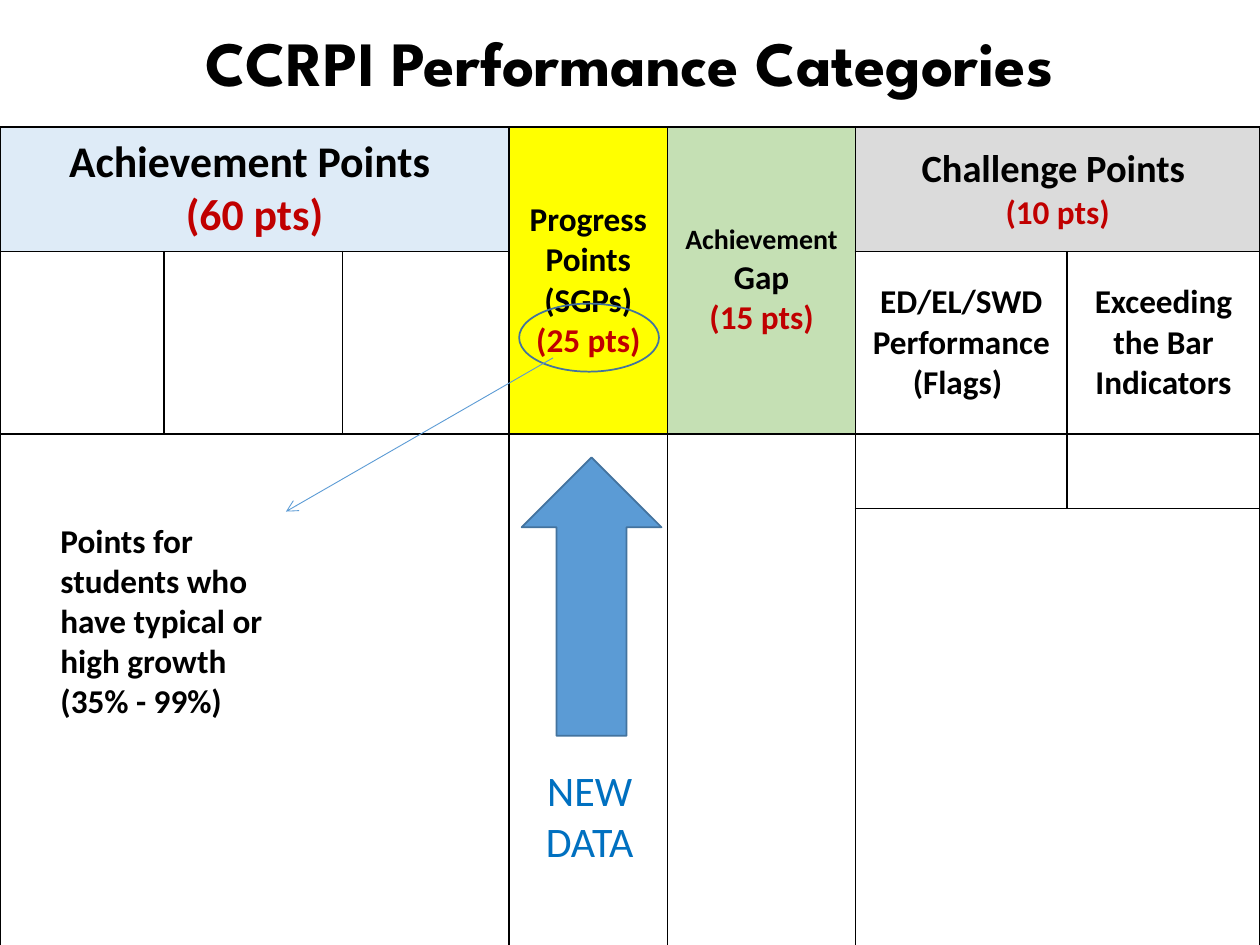
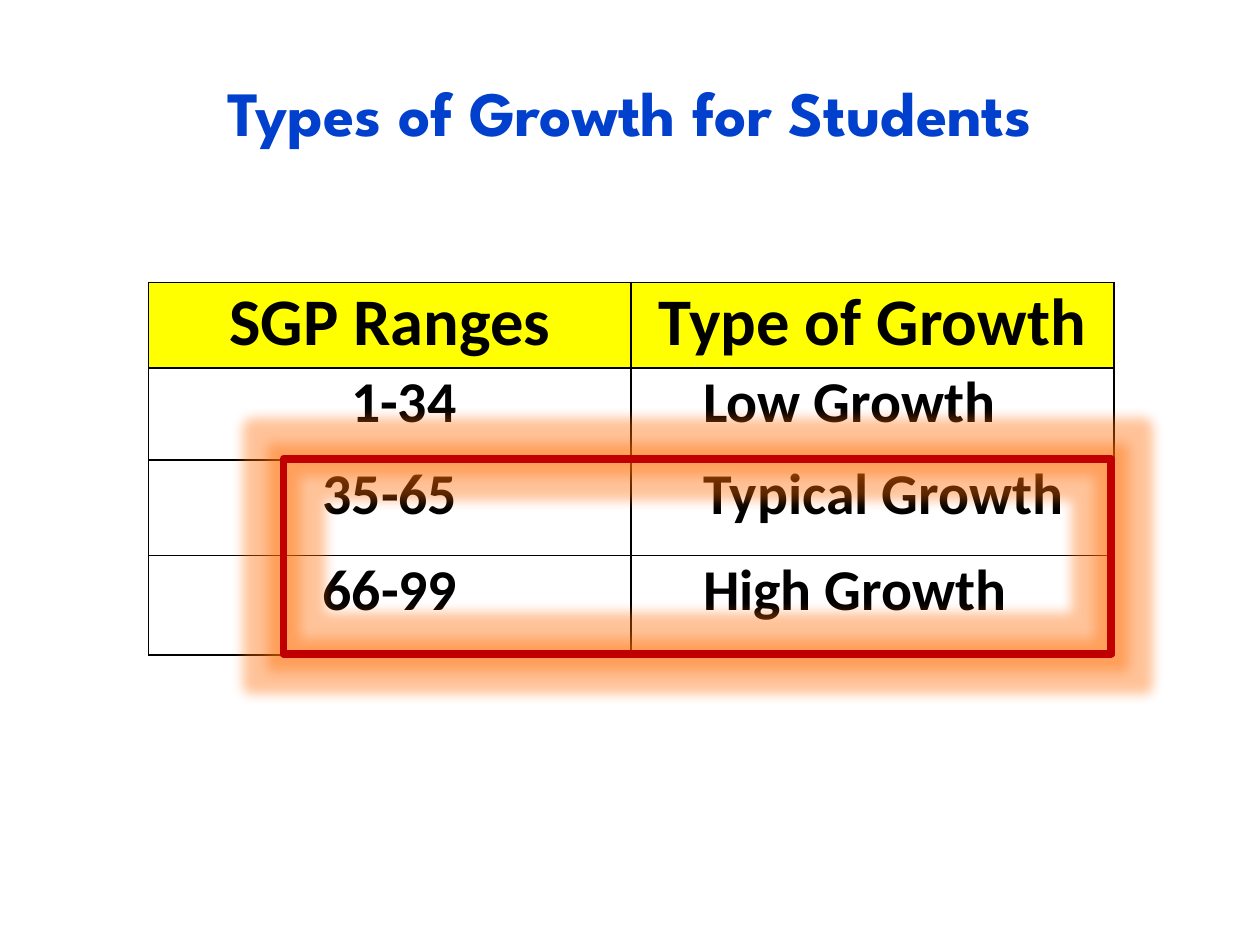
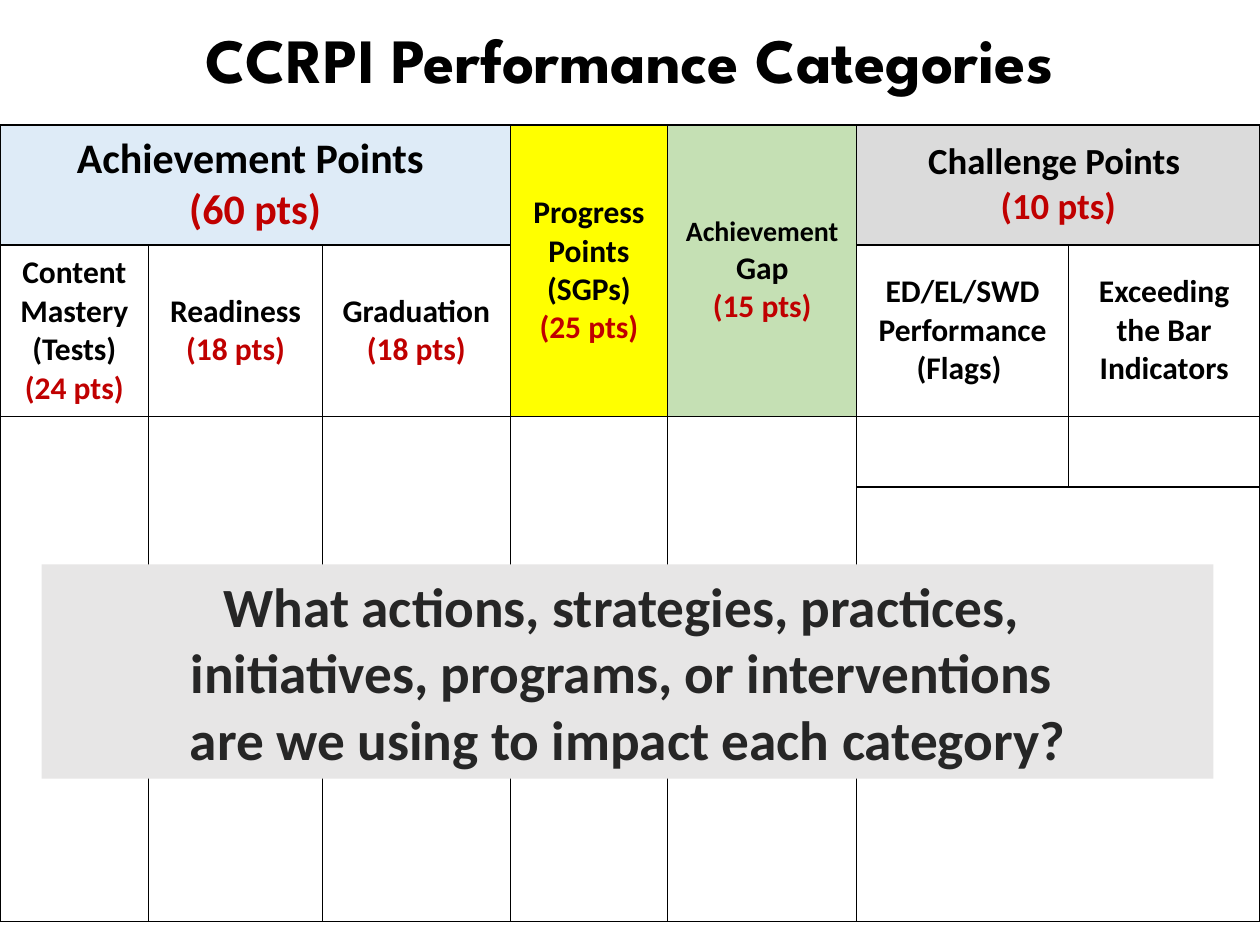
from lxml.etree import SubElement as Sub
from pptx import Presentation
from pptx.dml.color import RGBColor
from pptx.enum.shapes import MSO_CONNECTOR as Conn, MSO_SHAPE as Shape
from pptx.enum.text import MSO_ANCHOR as Anchor, MSO_AUTO_SIZE as Fit, PP_ALIGN as Align
from pptx.oxml.ns import qn
from pptx.util import Inches, Pt

# Shared style
BLACK, WHITE, RED = "000000", "FFFFFF", "C00000"
YELLOW, BLUE, EDGE = "FFFF00", "5B9BD5", "43739E"
BODY, HEAD = "Calibri", "League Spartan"
WIDE, TIGHT, FLAT = (0.13, 0.07), (0.1, 0.05), (0.07, 0)
COLS, ROWS = 100, 75  # grid units on a slide


def ink(code):
    return RGBColor.from_string(code)


class Deck:
    def __init__(self):
        self.file = Presentation()
        self.file.slide_width, self.file.slide_height = Inches(10), Inches(7.5)
        self.slide = None

    def x(self, n):
        return round(self.file.slide_width * n / COLS)

    def y(self, n):
        return round(self.file.slide_height * n / ROWS)

    def area(self, box):
        left, top, wide, high = box
        return self.x(left), self.y(top), self.x(wide), self.y(high)

    def pad(self, part, inset):
        side, edge = map(Inches, inset)
        part.margin_left = part.margin_right = side
        part.margin_top = part.margin_bottom = edge

    def words(self, frame, paras, align=Align.CENTER, font=BODY, bold=True, indent=0):
        """Each paragraph is a list of runs: (text, size, colour)."""
        frame.word_wrap = True
        for i, runs in enumerate(paras):
            para = frame.paragraphs[0] if i == 0 else frame.add_paragraph()
            para.alignment = align
            if indent:
                para._p.get_or_add_pPr().set("marL", str(Inches(indent)))
            for text, size, color in runs:
                for j, line in enumerate(text.split("\n")):
                    if j:
                        para.add_line_break()
                    run = para.add_run()
                    run.text = line
                    run.font.name, run.font.size = font, Pt(size)
                    run.font.bold, run.font.color.rgb = bold, ink(color)

    def page(self, title, box, color=BLACK, inset=TIGHT, anchor=Anchor.TOP, space=1.0):
        self.slide = self.file.slides.add_slide(self.file.slide_layouts[5])
        head = self.slide.shapes.title
        head.left, head.top, head.width, head.height = self.area(box)
        frame = head.text_frame
        frame.auto_size, frame.vertical_anchor = Fit.NONE, anchor
        self.pad(frame, inset)
        self.words(frame, [[(title, 36, color)]], font=HEAD)
        frame.paragraphs[0].line_spacing = space

    def text(self, box, paras, **style):
        frame = self.slide.shapes.add_textbox(*self.area(box)).text_frame
        self.pad(frame, WIDE)
        self.words(frame, paras, **style)

    def shape(self, kind, box, fill=None, line=None, width=1):
        item = self.slide.shapes.add_shape(kind, *self.area(box))
        item.shadow.inherit = False
        self.paint(item.fill, fill)
        if line:
            item.line.color.rgb, item.line.width = ink(line), Pt(width)
        else:
            item.line.fill.background()
        return item

    def paint(self, fill, color):
        if color:
            fill.solid()
            fill.fore_color.rgb = ink(color)
        else:
            fill.background()

    def glow(self, item, color, size, alpha):
        fx = item._element.spPr.find(qn("a:effectLst"))
        halo = Sub(fx, qn("a:glow"), rad=str(Pt(size)))
        tone = Sub(halo, qn("a:srgbClr"), val=color)
        Sub(tone, qn("a:alpha"), val=str(alpha * 1000))

    def arrow(self, start, end, color, width):
        line = self.slide.shapes.add_connector(
            Conn.STRAIGHT, self.x(start[0]), self.y(start[1]), self.x(end[0]), self.y(end[1]))
        line.line.color.rgb, line.line.width = ink(color), Pt(width)
        props = line._element.spPr
        Sub(props.find(qn("a:ln")), qn("a:tailEnd"), type="arrow")
        Sub(props, qn("a:effectLst"))

    def table(self, left, top, cols, rows):
        box = self.area((left, top, sum(cols), sum(rows)))
        grid = self.slide.shapes.add_table(len(rows), len(cols), *box).table
        grid.first_row = grid.horz_banding = False
        for col, wide in zip(grid.columns, cols):
            col.width = self.x(wide)
        for row, high in zip(grid.rows, rows):
            row.height = self.y(high)
        for cell in grid.iter_cells():
            props = cell._tc.get_or_add_tcPr()
            for side in ("lnL", "lnR", "lnT", "lnB"):
                edge = Sub(props, qn("a:" + side), w=str(Pt(1)))
                Sub(Sub(edge, qn("a:solidFill")), qn("a:srgbClr"), val=BLACK)
            self.paint(cell.fill, None)
        return grid

    def cell(self, cell, paras, fill=None, inset=WIDE, anchor=Anchor.MIDDLE, **style):
        self.paint(cell.fill, fill)
        self.pad(cell, inset)
        cell.vertical_anchor = anchor
        self.words(cell.text_frame, paras, **style)

    def board(self, top, cols, rows, sizes, parts, merges):
        """Table of the performance categories."""
        main, base, side, bonus = sizes
        grid = self.table(0, top, cols, rows)
        shared = [(0, 0, 0, 2), (0, 3, 1, 3), (0, 4, 1, 4), (0, 5, 0, 6),
                  (2, 3, 3, 3), (2, 4, 3, 4), (3, 5, 3, 6)]
        for r, c, r2, c2 in shared + merges:
            grid.cell(r, c).merge(grid.cell(r2, c2))

        def lines(*texts):
            return [[(t, base, RED if "pts" in t else BLACK)] for t in texts]

        heads = [
            (0, "DEEBF7", [[("Achievement Points ", main, BLACK)], [("(60 pts)", main, RED)]]),
            (3, YELLOW, lines("Progress Points", "(SGPs)", "(25 pts)")),
            (4, "C5E0B4", [[("Achievement ", 16, BLACK), ("Gap", base, BLACK)]]
             + lines("(15 pts)")),
            (5, "DBDBDB", [[("Challenge Points ", side, BLACK)], [("(10 pts)", bonus, RED)]]),
        ]
        for c, fill, paras in heads:
            self.cell(grid.cell(0, c), paras, fill)
        subs = dict(enumerate(parts))
        subs[5] = ("ED/EL/SWD", "Performance", "(Flags) ")
        subs[6] = ("Exceeding the Bar Indicators",)
        for c, texts in subs.items():
            self.cell(grid.cell(1, c), lines(*texts), WHITE)


def points(deck):
    deck.page("CCRPI Performance Categories", (4.5, 1.2, 90.9, 7.4), inset=WIDE)
    deck.board(10.1, (13, 14.2, 13.2, 12.6, 14.9, 16.8, 15.3), (9.5, 14.5, 5.9, 34.9),
               (25, 19, 22, 19), [(), (), ()], [(2, 0, 3, 2)])
    # New data marker
    deck.shape(Shape.UP_ARROW, (41.4, 36.3, 11.1, 22.1), BLUE, EDGE)
    deck.text((40.3, 60, 13, 9.6), [[("NEW DATA", 24, "0070C0")]], bold=False)
    # Progress note
    deck.shape(Shape.OVAL, (41.2, 24.1, 11.1, 5.4), line=EDGE)
    deck.arrow((43.9, 28.4), (22.7, 40.6), BLUE, 0.5)
    note = ("Points for students who have typical or high growth", "(35% - 99%)")
    deck.text((3.5, 40.6, 22.2, 17.4), [[(t, 19, BLACK)] for t in note], align=Align.LEFT)


def growth(deck):
    deck.page("Types of Growth for Students", (5, 3, 90, 12.5), "0040CC",
              anchor=Anchor.MIDDLE, space=0.9)
    grid = deck.table(11.8, 22.4, (38.3, 38.3), (6.8, 7.3, 7.6, 7.9))
    flat = {"inset": FLAT, "anchor": Anchor.TOP}
    for c, name in enumerate(("SGP Ranges", "Type of Growth")):
        deck.cell(grid.cell(0, c), [[(name, 38, BLACK)]], YELLOW, **flat)
    kinds = [("1-34", "Low Growth", 0.22), ("35-65", "Typical Growth", 0),
             ("66-99", "High Growth", 0)]
    for r, (span, kind, shift) in enumerate(kinds, 1):
        deck.cell(grid.cell(r, 0), [[(span, 33, BLACK)]], indent=shift, **flat)
        deck.cell(grid.cell(r, 1), [[(kind, 33, BLACK)]], align=Align.LEFT, indent=0.5, **flat)
    # Frame round the growth that earns points
    frame = deck.shape(Shape.RECTANGLE, (22.5, 36.4, 65.7, 15.5), line=RED, width=4.5)
    deck.glow(frame, "FF6A00", 14, 40)


def actions(deck):
    deck.page("CCRPI Performance Categories", (4.5, 1.1, 90.9, 7.2))
    parts = [("Content", "Mastery", "(Tests)", "(24 pts)"),
             ("Readiness", "(18 pts)"), ("Graduation", "(18 pts)")]
    deck.board(9.9, (11.8, 13.8, 14.9, 12.5, 15, 16.8, 15.2), (9.4, 13.6, 5.6, 34.5),
               (24, 18, 21, 21), parts, [(2, c, 3, c) for c in range(3)])
    # Question
    ask = ("What actions, strategies, practices, \ninitiatives, programs, or interventions \n"
           "are we using to impact each category?")
    band = deck.shape(Shape.RECTANGLE, (3.3, 44.8, 93, 17), "E7E6E6")
    deck.words(band.text_frame, [[(ask, 31.6, "262626")]])


def main():
    deck = Deck()
    for make in (points, growth, actions):
        make(deck)
    deck.file.save("out.pptx")


if __name__ == "__main__":
    main()
